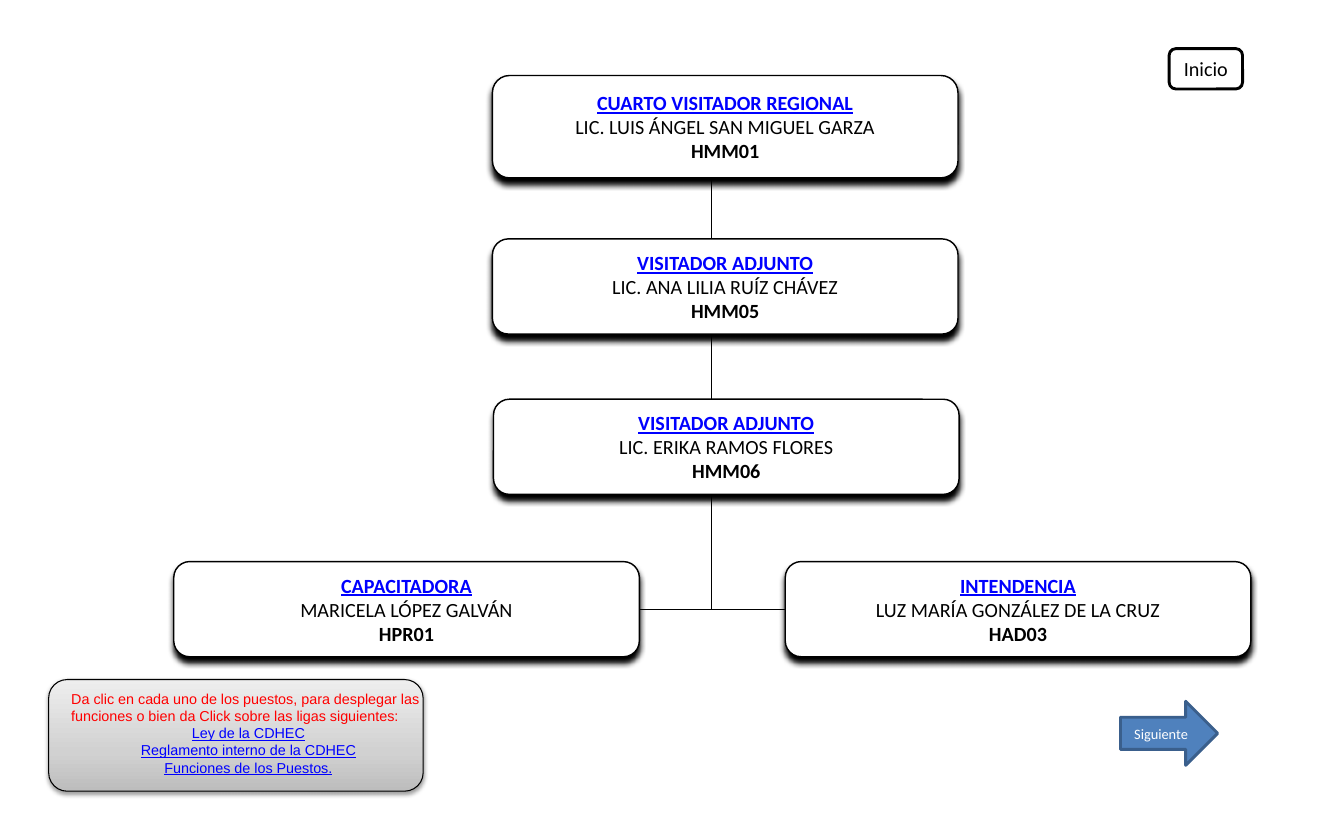
"""Builds the organisation chart of a regional office as one slide."""
from copy import deepcopy

from lxml import etree
from pptx import Presentation
from pptx import util as u
from pptx.dml.color import RGBColor
from pptx.enum import shapes, text
from pptx.oxml import ns

PX = 9144
COLORS = {"ink": "000000", "paper": "FFFFFF", "link": "0000FF", "alert": "FF0000",
          "arrow": "4F81BD", "arrow_edge": "3A5F8C"}
NOTE_STOPS = [(0, "BDBDBD"), (0.35, "D1D1D1"), (1, "EEEEEE")]
POST_WIDTH = 450
POSTS = [
    (476, 73, 99, "CUARTO VISITADOR REGIONAL", "LIC. LUIS ÁNGEL SAN MIGUEL GARZA", "HMM01"),
    (476, 231, 92, "VISITADOR ADJUNTO", "LIC. ANA LILIA RUÍZ CHÁVEZ", "HMM05"),
    (477, 386, 92, "VISITADOR ADJUNTO", "LIC. ERIKA RAMOS FLORES", "HMM06"),
    (168, 543, 92, "CAPACITADORA", "MARICELA LÓPEZ GALVÁN", "HPR01"),
    (759, 543, 92, "INTENDENCIA", "LUZ MARÍA GONZÁLEZ DE LA CRUZ", "HAD03"),
]
LINES = [(688, 173, 688, 589), (619, 589, 759, 589)]
NOTE = "Da clic en cada uno de los puestos, para desplegar las funciones o bien da Click sobre las ligas siguientes:"
NOTE_LINKS = ["Ley de la CDHEC", "Reglamento interno de la CDHEC", "Funciones de los Puestos."]


def px(*lengths):
    return [u.Emu(length * PX) for length in lengths]


def rgb(name):
    return RGBColor.from_string(COLORS[name])


def add_box(page, kind, place, fill, edge, weight):
    box = page.shapes.add_shape(kind, *px(*place))
    box.shadow.inherit = False
    if fill:
        box.fill.solid()
        box.fill.fore_color.rgb = rgb(fill)
    box.line.color.rgb = rgb(edge)
    box.line.width = u.Pt(weight)
    box.text_frame.vertical_anchor = text.MSO_ANCHOR.MIDDLE
    return box


def add_shadow(box, blur, distance, alpha):
    effects = box._element.spPr.find(ns.qn("a:effectLst"))
    shadow = etree.SubElement(effects, ns.qn("a:outerShdw"), blurRad=str(u.Pt(blur)),
                              dist=str(u.Pt(distance)), dir="5400000", rotWithShape="0")
    color = etree.SubElement(shadow, ns.qn("a:srgbClr"), val=COLORS["ink"])
    etree.SubElement(color, ns.qn("a:alpha"), val=str(alpha * 1000))


def write(frame, rows, size, face, align=text.PP_ALIGN.CENTER):
    for index, (words, color, bold, underline) in enumerate(rows):
        para = frame.add_paragraph() if index else frame.paragraphs[0]
        para.text = words
        para.alignment = align
        para.font.size = u.Pt(size)
        para.font.name = face
        para.font.color.rgb = rgb(color)
        para.font.bold = bold
        para.font.underline = underline


def add_post(page, left, top, height, title, person, code):
    box = add_box(page, shapes.MSO_SHAPE.ROUNDED_RECTANGLE,
                  (left, top, POST_WIDTH, height), "paper", "ink", 1)
    add_shadow(box, 4, 4, 100)
    frame = box.text_frame
    frame.word_wrap = False
    frame.margin_left, frame.margin_top, frame.margin_right, frame.margin_bottom = px(17, 9, 17, 9)
    write(frame, [(title, "link", True, True), (person, "ink", False, False),
                  (code, "ink", True, False)], 14, "Calibri")


def add_line(page, ends):
    line = page.shapes.add_connector(shapes.MSO_CONNECTOR.STRAIGHT, *px(*ends))
    line.line.color.rgb = rgb("ink")
    line.line.width = u.Pt(0.75)
    etree.SubElement(line._element.spPr, ns.qn("a:effectLst"))


def add_note(page):
    panel = add_box(page, shapes.MSO_SHAPE.ROUNDED_RECTANGLE, (47, 657, 362, 108), None, "ink", 0.75)
    panel.fill.gradient()
    panel.fill.gradient_angle = 90
    stop_list = panel._element.spPr.find(".//" + ns.qn("a:gsLst"))
    stop_list.append(deepcopy(stop_list[0]))
    for stop, (position, color) in zip(panel.fill.gradient_stops, NOTE_STOPS):
        stop.position = position
        stop.color.rgb = RGBColor.from_string(color)
    add_shadow(panel, 3.1, 1.6, 38)

    frame = page.shapes.add_textbox(*px(59, 662, 362, 94)).text_frame
    frame.word_wrap = True
    rows = [(NOTE, "alert", False, False)] + [(link, "link", False, True) for link in NOTE_LINKS]
    write(frame, rows, 10, "Arial")
    frame.paragraphs[0].alignment = text.PP_ALIGN.LEFT


def main():
    deck = Presentation()
    deck.slide_width, deck.slide_height = px(1299, 788)
    page = deck.slides.add_slide(deck.slide_layouts[6])
    for ends in LINES:
        add_line(page, ends)
    for post in POSTS:
        add_post(page, *post)
    home = add_box(page, shapes.MSO_SHAPE.ROUNDED_RECTANGLE, (1130, 47, 71, 39), "paper", "ink", 2)
    write(home.text_frame, [("Inicio", "ink", False, False)], 14, "Calibri")
    add_note(page)
    following = add_box(page, shapes.MSO_SHAPE.RIGHT_ARROW, (1083, 678, 94, 62),
                        "arrow", "arrow_edge", 2)
    write(following.text_frame, [("Siguiente", "paper", False, False)], 10, "Calibri")
    deck.save("out.pptx")


if __name__ == "__main__":
    main()
